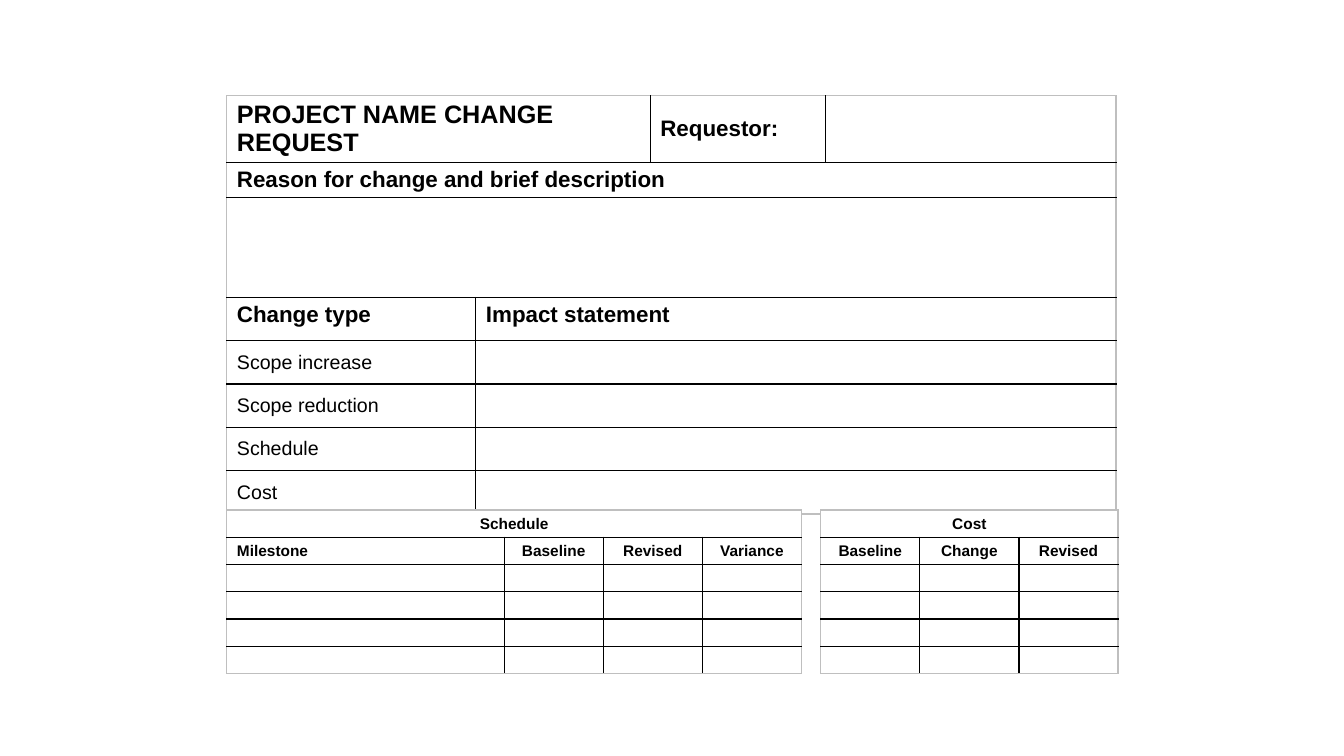
import pptx
import pptx.util
import pptx.dml.color
import pptx.enum.text
import pptx.oxml.ns
from lxml import etree

Inches, Pt = pptx.util.Inches, pptx.util.Pt
RGB = pptx.dml.color.RGBColor
MIDDLE, TOP = pptx.enum.text.MSO_ANCHOR.MIDDLE, pptx.enum.text.MSO_ANCHOR.TOP
LEFT, CENTER = pptx.enum.text.PP_ALIGN.LEFT, pptx.enum.text.PP_ALIGN.CENTER
qn = pptx.oxml.ns.qn

COLORS = {"ink": "000000", "frame": "BFBFBF", "paper": "FFFFFF"}
FONT = "Arial"
LINE = Pt(1)

# Row: height, text size, bold, anchor, cells as (text, columns spanned)
REQUEST_ROWS = [
    (0.66, 18, True, MIDDLE, [("PROJECT NAME CHANGE REQUEST", 2), ("Requestor:", 1), ("", 1)]),
    (0.35, 16, True, TOP, [("Reason for change and brief description", 4)]),
    (0.99, 16, False, TOP, [("", 4)]),
    (0.43, 16, True, TOP, [("Change type", 1), ("Impact statement", 3)]),
] + [
    (0.43, 14, False, MIDDLE, [(kind, 1), ("", 3)])
    for kind in ("Scope increase", "Scope reduction", "Schedule", "Cost")
]


def tracking_rows(title, headings, blank_rows=4):
    n = len(headings)
    cells = [[(title, n)], [(h, 1) for h in headings]] + [[("", 1)] * n] * blank_rows
    return [(0.27, 11, True, MIDDLE, row) for row in cells]


FIGURE = 2.95 / 3
# Left, top, column widths, rows, alignment, fill
TABLES = [
    (2.25, 0.95, [2.47, 1.73, 1.74, 2.88], REQUEST_ROWS, LEFT, None),
    (2.25, 5.06, [2.75] + [FIGURE] * 3,
     tracking_rows("Schedule", ["Milestone", "Baseline", "Revised", "Variance"]),
     CENTER, "paper"),
    (8.14, 5.06, [FIGURE] * 3,
     tracking_rows("Cost", ["Baseline", "Change", "Revised"]), CENTER, "paper"),
]
SIZES = {"Requestor:": 16}
LEFT_ALIGNED = {"Milestone"}


def add_border(cell, side, color):
    ln = etree.SubElement(cell._tc.get_or_add_tcPr(), qn("a:ln" + side), w=str(LINE))
    fill = etree.SubElement(ln, qn("a:solidFill"))
    etree.SubElement(fill, qn("a:srgbClr"), val=COLORS[color])


def draw_borders(table):
    """Rule the inner edges in ink and the outer edges in the frame colour."""
    rows, cols = len(table.rows), len(table.columns)
    for r in range(rows):
        for c in range(cols):
            cell = table.cell(r, c)
            end = c + (cell.span_width if cell.is_merge_origin else 1)
            inside = cell.is_spanned and end < cols and table.cell(r, end).is_spanned
            if not cell.is_spanned:
                add_border(cell, "L", "frame" if c == 0 else "ink")
            if not inside:
                add_border(cell, "R", "frame" if end == cols else "ink")
            add_border(cell, "T", "frame" if r == 0 else "ink")
            add_border(cell, "B", "frame" if r == rows - 1 else "ink")


def write_cell(cell, text, size, bold, align):
    p = cell.text_frame.paragraphs[0]
    p.alignment = align
    if text:
        p.text = text
    else:
        etree.SubElement(p._p, qn("a:endParaRPr"), sz=str(size * 100))
    p.font.name = FONT
    p.font.size = Pt(size)
    p.font.bold = bold
    p.font.color.rgb = RGB.from_string(COLORS["ink"])


def add_form_table(slide, left, top, widths, rows, align, fill):
    height = sum(row[0] for row in rows)
    frame = slide.shapes.add_table(len(rows), len(widths), Inches(left), Inches(top),
                                   Inches(sum(widths)), Inches(height))
    table = frame.table
    table.first_row = table.horz_banding = False
    for column, width in zip(table.columns, widths):
        column.width = Inches(width)
    for r, (row_height, size, bold, anchor, cells) in enumerate(rows):
        table.rows[r].height = Inches(row_height)
        c = 0
        for text, span in cells:
            cell = table.cell(r, c)
            if span > 1:
                cell.merge(table.cell(r, c + span - 1))
            cell.vertical_anchor = anchor
            write_cell(cell, text, SIZES.get(text, size), bold,
                       LEFT if text in LEFT_ALIGNED else align)
            c += span
    draw_borders(table)
    for cell in table.iter_cells():
        if fill:
            cell.fill.solid()
            cell.fill.fore_color.rgb = RGB.from_string(COLORS[fill])
        else:
            cell.fill.background()


def main():
    prs = pptx.Presentation()
    prs.slide_width, prs.slide_height = Inches(13.33), Inches(7.5)
    slide = prs.slides.add_slide(prs.slide_layouts[6])
    for spec_row in TABLES:
        add_form_table(slide, *spec_row)
    prs.save("out.pptx")


if __name__ == "__main__":
    main()
